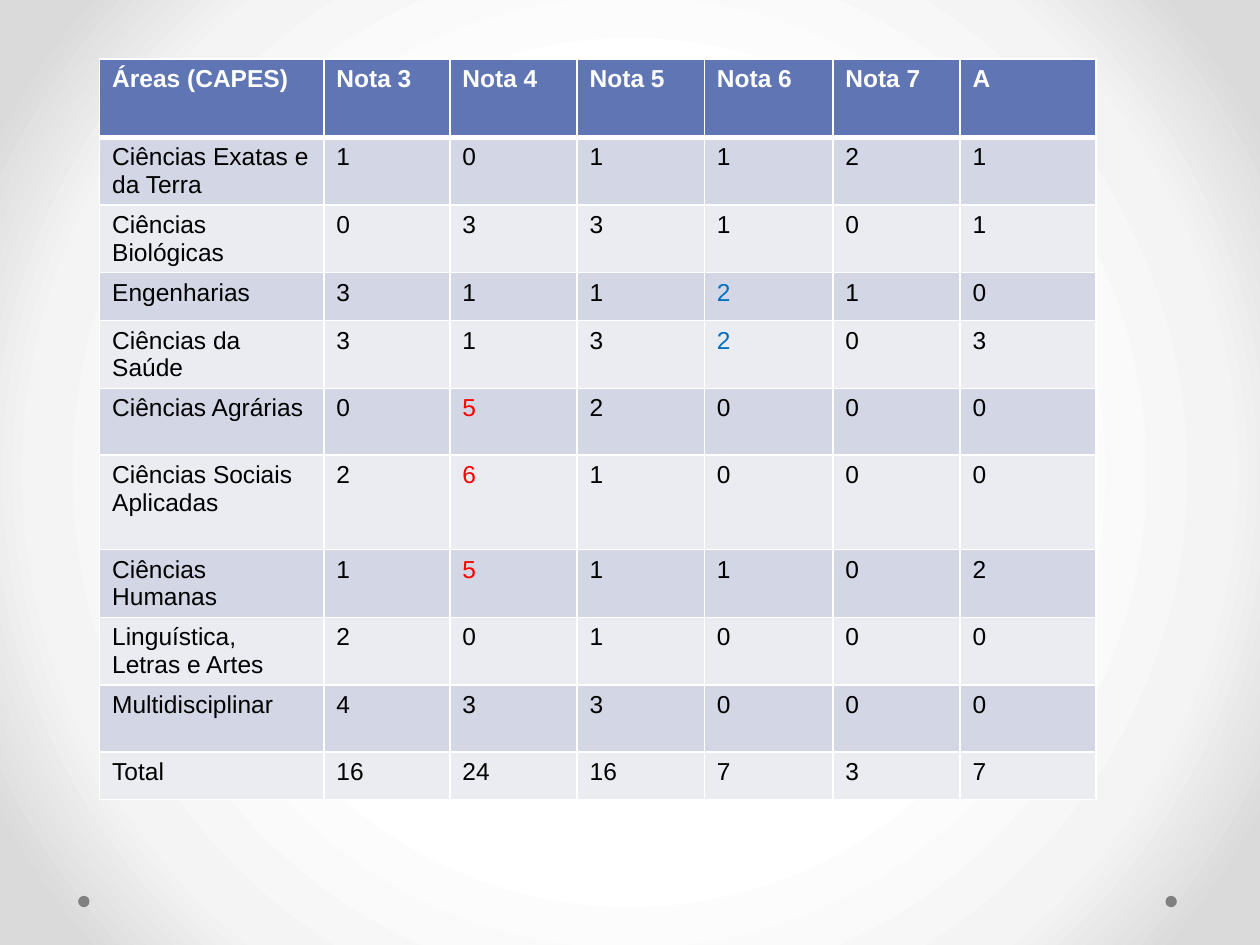
from lxml.etree import SubElement
from pptx import Presentation
from pptx.dml.color import RGBColor as RGB
from pptx.enum.shapes import MSO_SHAPE as SHAPE
from pptx.oxml.ns import qn
from pptx.util import Inches, Pt

COLORS = {
    "header": "6076B4", "band_dark": "D2D6E5", "band_light": "EAECF2",
    "white": "FFFFFF", "black": "000000", "blue": "0070C0", "red": "FF0000",
    "dot": "808080", "bg_mid": "F4F4F4", "bg_edge": "DADADA",
}
BACKGROUND_STOPS = [(50, "white"), (76, "bg_mid"), (92, "bg_edge")]

HEADER = ["Áreas (CAPES)", "Nota 3", "Nota 4", "Nota 5", "Nota 6", "Nota 7", "A"]
AREAS = [
    ("Ciências Exatas e da Terra", 1, 0, 1, 1, 2, 1),
    ("Ciências Biológicas", 0, 3, 3, 1, 0, 1),
    ("Engenharias", 3, 1, 1, 2, 1, 0),
    ("Ciências da Saúde", 3, 1, 3, 2, 0, 3),
    ("Ciências Agrárias", 0, 5, 2, 0, 0, 0),
    ("Ciências Sociais Aplicadas", 2, 6, 1, 0, 0, 0),
    ("Ciências Humanas", 1, 5, 1, 1, 0, 2),
    ("Linguística, Letras e Artes", 2, 0, 1, 0, 0, 0),
    ("Multidisciplinar", 4, 3, 3, 0, 0, 0),
    ("Total", 16, 24, 16, 7, 3, 7),
]
COL_WIDTHS = [1.78, 1, 1.01, 1.01, 1.02, 1.01, 1.08]
ROW_HEIGHTS = [0.62, 0.53, 0.53, 0.38, 0.53, 0.53, 0.75, 0.53, 0.53, 0.53, 0.38]
HIGHLIGHTS = {(3, 4): "blue", (4, 4): "blue",
              (5, 2): "red", (6, 2): "red", (7, 2): "red"}


class SlideBuilder:
    def __init__(self, slide, font="Arial", size=14):
        self.s = slide
        self.text_format = {"name": font, "size": Pt(size)}

    def background(self, stops):
        """Fill the background with a circular gradient spreading from the centre."""
        self.s.background.fill.gradient()
        grad = self.s.element.find(".//" + qn("a:gradFill"))
        for child in list(grad):
            grad.remove(child)
        gs_list = SubElement(grad, qn("a:gsLst"))
        for pos, color in stops:
            gs = SubElement(gs_list, qn("a:gs"), pos=str(pos * 1000))
            SubElement(gs, qn("a:srgbClr"), val=COLORS[color])
        circle = SubElement(grad, qn("a:path"), path="circle")
        SubElement(circle, qn("a:fillToRect"), {side: "50000" for side in "ltrb"})

    def dot(self, left, top, diameter, color):
        sp = self.s.shapes.add_shape(SHAPE.OVAL, Inches(left), Inches(top),
                                     Inches(diameter), Inches(diameter))
        sp.shadow.inherit = False
        sp.fill.solid()
        sp.fill.fore_color.rgb = RGB.from_string(COLORS[color])
        sp.line.fill.background()

    def borders(self, cell, widths):
        """Draw white cell borders; widths maps L, R, T and B to points."""
        tc_pr = cell._tc.get_or_add_tcPr()
        for side in "LRTB":
            ln = SubElement(tc_pr, qn("a:ln" + side), w=str(Pt(widths[side])))
            fill = SubElement(ln, qn("a:solidFill"))
            SubElement(fill, qn("a:srgbClr"), val=COLORS["white"])

    def cell(self, cell, text, fill, color, bold, widths):
        self.borders(cell, widths)
        cell.fill.solid()
        cell.fill.fore_color.rgb = RGB.from_string(COLORS[fill])
        r = cell.text_frame.paragraphs[0].add_run()
        r.text = str(text)
        for name, value in {**self.text_format, "bold": bold}.items():
            setattr(r.font, name, value)
        r.font.color.rgb = RGB.from_string(COLORS[color])

    def table(self, left, top, rows, col_widths, row_heights, highlights):
        table = self.s.shapes.add_table(
            len(rows), len(col_widths), Inches(left), Inches(top),
            Inches(sum(col_widths)), Inches(sum(row_heights))).table
        for column, width in zip(table.columns, col_widths):
            column.width = Inches(width)
        for row, height in zip(table.rows, row_heights):
            row.height = Inches(height)
        for i, row in enumerate(rows):
            is_header = i == 0
            fill = "header" if is_header else "band_dark" if i % 2 else "band_light"
            widths = {"L": 1, "R": 1, "T": 3 if i == 1 else 1,
                      "B": 3 if is_header else 1}
            for j, text in enumerate(row):
                color = "white" if is_header else highlights.get((i, j), "black")
                self.cell(table.cell(i, j), text, fill, color, is_header, widths)


def main():
    prs = Presentation()
    prs.slide_width, prs.slide_height = Inches(10), Inches(7.5)
    builder = SlideBuilder(prs.slides.add_slide(prs.slide_layouts[6]))
    builder.background(BACKGROUND_STOPS)
    for left in (9.25, 0.62):
        builder.dot(left, 7.11, 0.09, "dot")
    builder.table(0.79, 0.47, [HEADER, *AREAS], COL_WIDTHS, ROW_HEIGHTS, HIGHLIGHTS)
    prs.save("out.pptx")


if __name__ == "__main__":
    main()
